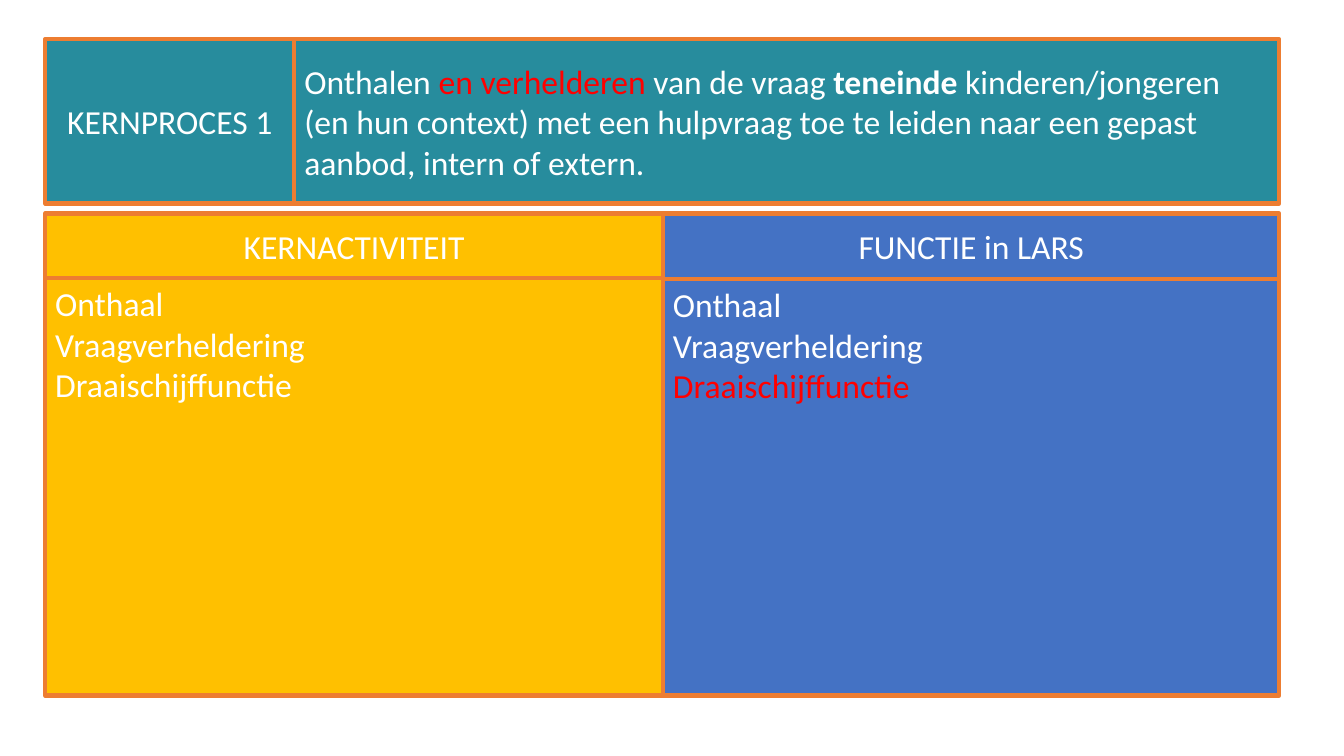
import pptx
import pptx.util
import pptx.dml.color
import pptx.enum.shapes
import pptx.enum.text
from pptx.util import Cm

# Content: each paragraph is a list of (text, style) runs
PROCESS = "KERNPROCES 1"
GOAL = [
    ("Onthalen ", ""),
    ("en verhelderen ", "accent"),
    ("van de vraag ", ""),
    ("teneinde", "bold"),
    (" kinderen/jongeren (en hun context) met een hulpvraag toe te leiden "
     "naar een gepast aanbod, intern of extern.", ""),
]
COLUMNS = [
    {"title": "KERNACTIVITEIT", "fill": "activity", "split": 7.01,
     "items": [("Onthaal", ""), ("Vraagverheldering", ""), ("Draaischijffunctie", "")]},
    {"title": "FUNCTIE in LARS", "fill": "function", "split": 7.04,
     "items": [("Onthaal", ""), ("Vraagverheldering", ""), ("Draaischijffunctie", "accent")]},
]

THEME = {
    "font": "Calibri", "size": 24, "line_width": 3,
    "process": "278C9D", "activity": "FFC000", "function": "4472C4",
    "border": "ED7D31", "text": "FFFFFF", "accent": "FF0000",
}

# Layout in cm
LEFT, MIDDLE, RIGHT = 1.14, 16.71, 32.24
PROCESS_TOP, PROCESS_BOTTOM, PROCESS_SPLIT = 0.99, 5.13, 7.42
TABLE_TOP, TABLE_BOTTOM = 5.38, 17.53

ALIGN = pptx.enum.text.PP_ALIGN
ANCHOR = pptx.enum.text.MSO_ANCHOR


def color(name):
    return pptx.dml.color.RGBColor.from_string(THEME[name])


def add_box(s, left, top, right, bottom, fill, paragraphs,
            align=ALIGN.LEFT, anchor=ANCHOR.MIDDLE):
    sp = s.shapes.add_shape(pptx.enum.shapes.MSO_SHAPE.RECTANGLE,
                            Cm(left), Cm(top), Cm(right - left), Cm(bottom - top))
    sp.shadow.inherit = False
    sp.fill.solid()
    sp.fill.fore_color.rgb = color(fill)
    sp.line.color.rgb = color("border")
    sp.line.width = pptx.util.Pt(THEME["line_width"])
    tf = sp.text_frame
    tf.word_wrap = True
    tf.vertical_anchor = anchor
    for i, runs in enumerate(paragraphs):
        p = tf.add_paragraph() if i else tf.paragraphs[0]
        p.alignment = align
        p.font.name = THEME["font"]
        p.font.size = pptx.util.Pt(THEME["size"])
        for text, style in runs:
            r = p.add_run()
            r.text = text
            r.font.color.rgb = color("accent" if style == "accent" else "text")
            if style == "bold":
                r.font.bold = True


prs = pptx.Presentation()
prs.slide_width, prs.slide_height = Cm(33.87), Cm(19.05)
s = prs.slides.add_slide(prs.slide_layouts[6])

# Process banner
add_box(s, PROCESS_SPLIT, PROCESS_TOP, RIGHT, PROCESS_BOTTOM, "process", [GOAL])
add_box(s, LEFT, PROCESS_TOP, PROCESS_SPLIT, PROCESS_BOTTOM, "process",
        [[(PROCESS, "")]], ALIGN.CENTER)

# Activity and function columns
for column, left, right in zip(COLUMNS, (LEFT, MIDDLE), (MIDDLE, RIGHT)):
    add_box(s, left, TABLE_TOP, right, column["split"], column["fill"],
            [[(column["title"], "")]], ALIGN.CENTER)
    add_box(s, left, column["split"], right, TABLE_BOTTOM, column["fill"],
            [[item] for item in column["items"]], anchor=ANCHOR.TOP)

prs.save("out.pptx")
